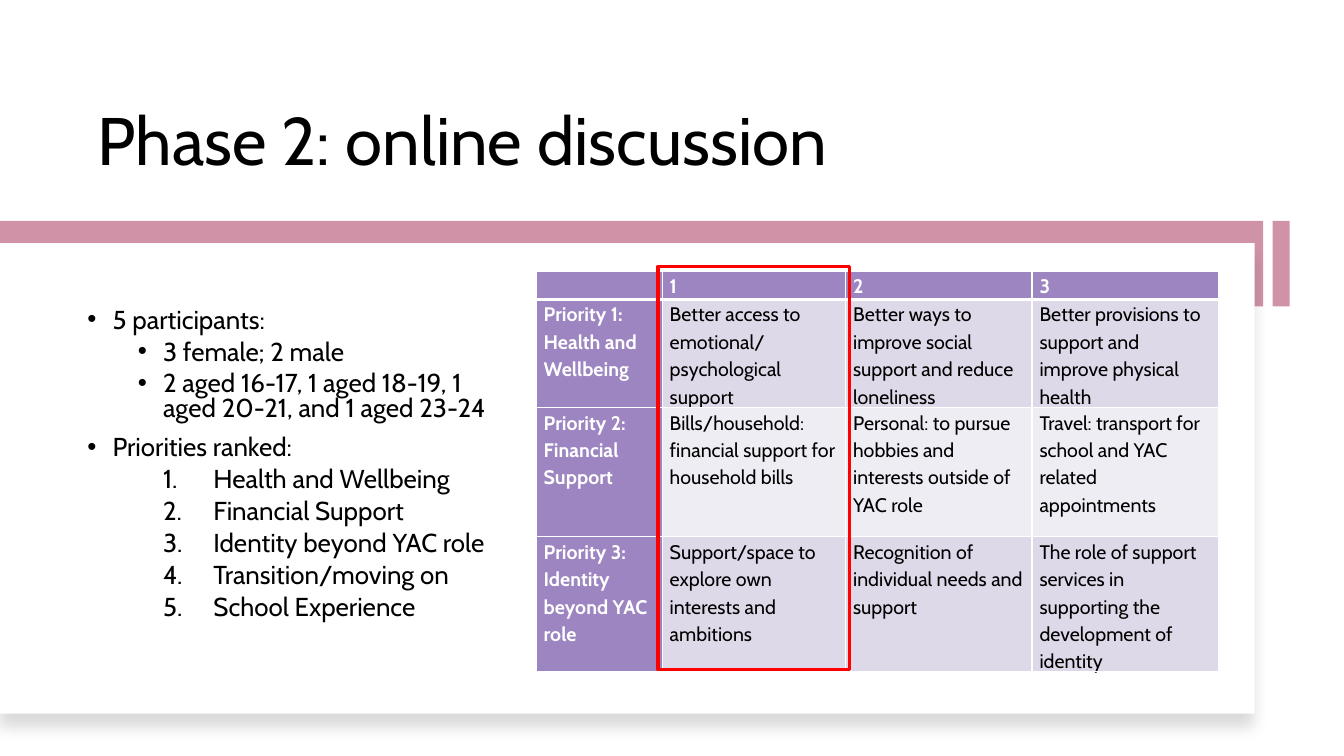
from lxml import etree
from pptx import Presentation
from pptx.dml.color import RGBColor
from pptx.enum import shapes, text
from pptx.oxml import ns
from pptx.util import Pt

FONT = "Cabin"
PINK, PURPLE, WHITE, BLACK, RED = "D092A7", "9C85C0", "FFFFFF", "000000", "FF0000"
BANDS = ["DED9E8", "EFEDF4"]

# text, level, left indent, hang, space before, numbered
POINT, SUB, RANK = (0, 18, 18, 10, False), (1, 54, 18, 5, False), (1, 90, 36, 5, True)
POINTS = [
    ("5 participants:", POINT),
    ("3 female; 2 male", SUB),
    ("2 aged 16-17, 1 aged 18-19, 1 aged 20-21, and 1 aged 23-24", SUB),
    ("Priorities ranked:", POINT),
    ("Health and Wellbeing", RANK),
    ("Financial Support", RANK),
    ("Identity beyond YAC role", RANK),
    ("Transition/moving on", RANK),
    ("School Experience", RANK),
]
ROWS = [
    ["", "1", "2", "3"],
    ["Priority 1: Health and Wellbeing",
     "Better access to emotional/ psychological support",
     "Better ways to improve social support and reduce loneliness",
     "Better provisions to support and improve physical health"],
    ["Priority 2: Financial Support",
     "Bills/household: financial support for household bills",
     "Personal: to pursue hobbies and interests outside of YAC role",
     "Travel: transport for school and YAC related appointments"],
    ["Priority 3: Identity beyond YAC role",
     "Support/space to explore own interests and ambitions",
     "Recognition of individual needs and support",
     "The role of support services in supporting the development of identity"],
]
WIDTHS = [90, 131, 133.2, 133.2]
HEIGHTS = [20.2, 74.2, 92.2, 92.2]


def color(code):
    return RGBColor.from_string(code)


def node(parent, tag, **attrs):
    child = etree.SubElement(parent, ns.qn("a:" + tag))
    for key, value in attrs.items():
        child.set(key, str(value))
    return child


def style(run, size, code, bold=False):
    run.font.name, run.font.size, run.font.bold = FONT, Pt(size), bold
    run.font.color.rgb = color(code)


def rect(slide, box, fill=None, line=None):
    shape = slide.shapes.add_shape(shapes.MSO_SHAPE.RECTANGLE, *map(Pt, box))
    shape.shadow.inherit = False
    if fill:
        shape.fill.solid()
        shape.fill.fore_color.rgb = color(fill)
    else:
        shape.fill.background()
    if line:
        shape.line.color.rgb = color(line)
        shape.line.width = Pt(2.25)
    else:
        shape.line.fill.background()
    return shape


def frame(slide, box, anchor):
    area = slide.shapes.add_textbox(*map(Pt, box)).text_frame
    area.word_wrap = True
    area.vertical_anchor = anchor
    return area


def add_title(slide, box):
    area = frame(slide, box, text.MSO_ANCHOR.BOTTOM)
    area.text = "Phase 2: online discussion"
    para = area.paragraphs[0]
    para.line_spacing = 0.9
    style(para.runs[0], 48, BLACK)


def add_panel(slide, box):
    left, top, width, height = box
    # Pink band, its separate end bar and the white card over the band
    rect(slide, (left, top, width, 61.2), PINK)
    rect(slide, (left + width + 6.8, top, 12.2, 61.2), PINK)
    card = rect(slide, (left, top + 16, width - 6, height - 16), WHITE)
    # Soft shadow below the card
    glow = node(card._element.spPr.find(ns.qn("a:effectLst")), "outerShdw",
                blurRad=Pt(11), dist=Pt(10), dir=5400000, algn="t", rotWithShape=0)
    node(node(glow, "srgbClr", val=BLACK), "alpha", val=15000)


def add_points(slide, box):
    area = frame(slide, box, text.MSO_ANCHOR.MIDDLE)
    area.margin_bottom = Pt(21.6)
    area.text = "\n".join(words for words, _ in POINTS)
    for i, (para, (_, kind)) in enumerate(zip(area.paragraphs, POINTS)):
        level, left, hang, before, ranked = kind
        props = para._p.get_or_add_pPr()
        props.set("marL", str(Pt(left)))
        props.set("indent", str(-Pt(hang)))
        if ranked:
            node(props, "buFont", typeface="+mj-lt")
            node(props, "buAutoNum", type="arabicPeriod")
        else:
            node(props, "buFont", typeface="Arial")
            node(props, "buChar", char="•")
        para.level = level
        para.line_spacing = 0.8
        para.space_before = Pt(before if i else 0)
        style(para.runs[0], 18.5, BLACK)


def fill_cell(cell, words, row, col):
    head = row == 0 or col == 0
    cell.margin_left = cell.margin_right = Pt(5.4)
    cell.margin_top = cell.margin_bottom = 0
    cell.text = words
    para = cell.text_frame.paragraphs[0]
    para.line_spacing = 1.15
    para.space_after = Pt(8)
    for run in para.runs:
        style(run, 14, WHITE if head else BLACK, head)
    if not words:
        para._p.get_or_add_endParaRPr().set("sz", "1400")
    # White borders, thicker under the header
    props = cell._tc.get_or_add_tcPr()
    for side in "LRTB":
        thick = (row, side) in ((0, "B"), (1, "T"))
        line = node(props, "ln" + side, w=Pt(3 if thick else 1))
        node(node(line, "solidFill"), "srgbClr", val=WHITE)
    cell.fill.solid()
    cell.fill.fore_color.rgb = color(PURPLE if head else BANDS[(row - 1) % 2])


def add_grid(slide, box):
    left, top = box[:2]
    grid = slide.shapes.add_table(len(ROWS), len(WIDTHS), *map(Pt, box)).table
    grid.first_row = grid.horz_banding = False
    for column, width in zip(grid.columns, WIDTHS):
        column.width = Pt(width)
    for r, (line, height) in enumerate(zip(ROWS, HEIGHTS)):
        grid.rows[r].height = Pt(height)
        for c, words in enumerate(line):
            fill_cell(grid.cell(r, c), words, r, c)
    # Red frame around the first choices
    rect(slide, (left + WIDTHS[0] - 3, top - 3.6, WIDTHS[1] + 6, 288), line=RED)


def main():
    deck = Presentation()
    deck.slide_width, deck.slide_height = Pt(960), Pt(540)
    slide = deck.slides.add_slide(deck.slide_layouts[6])
    add_title(slide, (62.6, 30.2, 792.7, 102.2))
    add_panel(slide, (0, 157.7, 902.2, 352))
    add_points(slide, (55.4, 197.3, 300.2, 288))
    add_grid(slide, (383, 193.7, sum(WIDTHS), sum(HEIGHTS)))
    deck.save("out.pptx")


if __name__ == "__main__":
    main()
